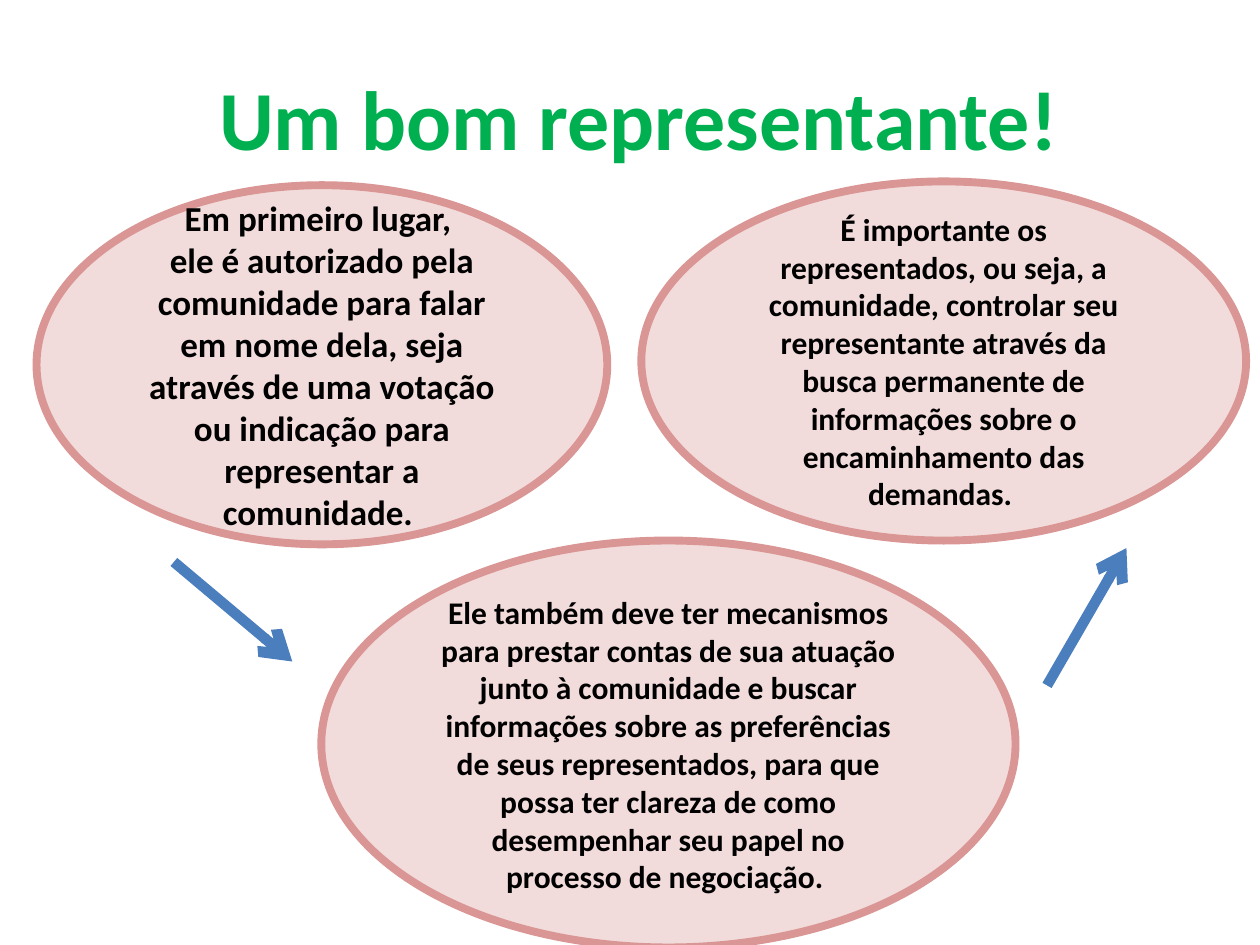
from lxml import etree
from pptx import Presentation
from pptx.dml.color import RGBColor
from pptx.enum.shapes import MSO_CONNECTOR, MSO_SHAPE
from pptx.enum.text import MSO_ANCHOR, PP_ALIGN
from pptx.oxml.ns import qn
from pptx.util import Pt

PX = 9144  # EMU per px, 100 px to the inch
TITLE_ONLY = 5
OVAL = MSO_SHAPE.OVAL
STRAIGHT = MSO_CONNECTOR.STRAIGHT
MIDDLE = MSO_ANCHOR.MIDDLE
CENTER = PP_ALIGN.CENTER
FONT = "Calibri"
COLORS = {
    "text": "000000",
    "title": "00B050",
    "oval": "F2DCDB",
    "outline": "D99694",
    "arrow": "4B7EBC",
}


class SlideBuilder:
    def __init__(self, slide):
        self.slide = slide

    def color(self, name):
        return RGBColor.from_string(COLORS[name])

    def add_span(self, para, text, size, color="text"):
        para.alignment = CENTER
        span = para.add_run()
        span.text = text
        span.font.name = FONT
        span.font.size = Pt(size)
        span.font.bold = True
        span.font.color.rgb = self.color(color)

    def title(self, left, top, width, height, spans):
        box = self.slide.shapes.title
        box.left, box.top = left * PX, top * PX
        box.width, box.height = width * PX, height * PX
        box.text_frame.vertical_anchor = MIDDLE
        for text, size, color in spans:
            self.add_span(box.text_frame.paragraphs[0], text, size, color)

    def oval(self, left, top, width, height, size, texts):
        shape = self.slide.shapes.add_shape(
            OVAL, left * PX, top * PX, width * PX, height * PX)
        shape.shadow.inherit = False
        shape.fill.solid()
        shape.fill.fore_color.rgb = self.color("oval")
        shape.line.color.rgb = self.color("outline")
        shape.line.width = Pt(4.5)
        frame = shape.text_frame
        frame.word_wrap = True
        frame.vertical_anchor = MIDDLE
        for index, text in enumerate(texts):
            para = frame.add_paragraph() if index else frame.paragraphs[0]
            self.add_span(para, text, size)

    def arrow(self, x1, y1, x2, y2):
        line = self.slide.shapes.add_connector(
            STRAIGHT, x1 * PX, y1 * PX, x2 * PX, y2 * PX)
        line.line.color.rgb = self.color("arrow")
        line.line.width = Pt(6)
        etree.SubElement(line.line._get_or_add_ln(), qn("a:tailEnd"), type="arrow")
        etree.SubElement(line._element.spPr, qn("a:effectLst"))


def main():
    deck = Presentation()
    deck.slide_width, deck.slide_height = 1000 * PX, 750 * PX
    page = SlideBuilder(deck.slides.add_slide(deck.slide_layouts[TITLE_ONLY]))

    # Title
    page.title(50, 30, 900, 125, [
        (" ", 44, "text"),
        ("Um bom representante!", 48, "title"),
    ])

    # Duties of a representative
    page.oval(29, 147, 453, 285, 20, [
        "Em primeiro lugar, ",
        "ele é autorizado pela comunidade para falar em nome dela, seja através "
        "de uma votação ou indicação para representar a comunidade. ",
    ])
    page.oval(255, 429, 551, 323, 18, [
        "Ele também deve ter mecanismos para prestar contas de sua atuação junto "
        "à comunidade e buscar informações sobre as preferências de seus "
        "representados, para que possa ter clareza de como desempenhar seu papel "
        "no processo de negociação. ",
    ])
    page.oval(509, 144, 480, 285, 18, [
        "É importante os representados, ou seja, a comunidade, controlar seu "
        "representante através da busca permanente de informações sobre o "
        "encaminhamento das demandas. ",
    ])

    # Arrows from one duty to the next
    page.arrow(138, 446, 232, 525)
    page.arrow(831, 544, 894, 435)

    deck.save("out.pptx")


if __name__ == "__main__":
    main()
